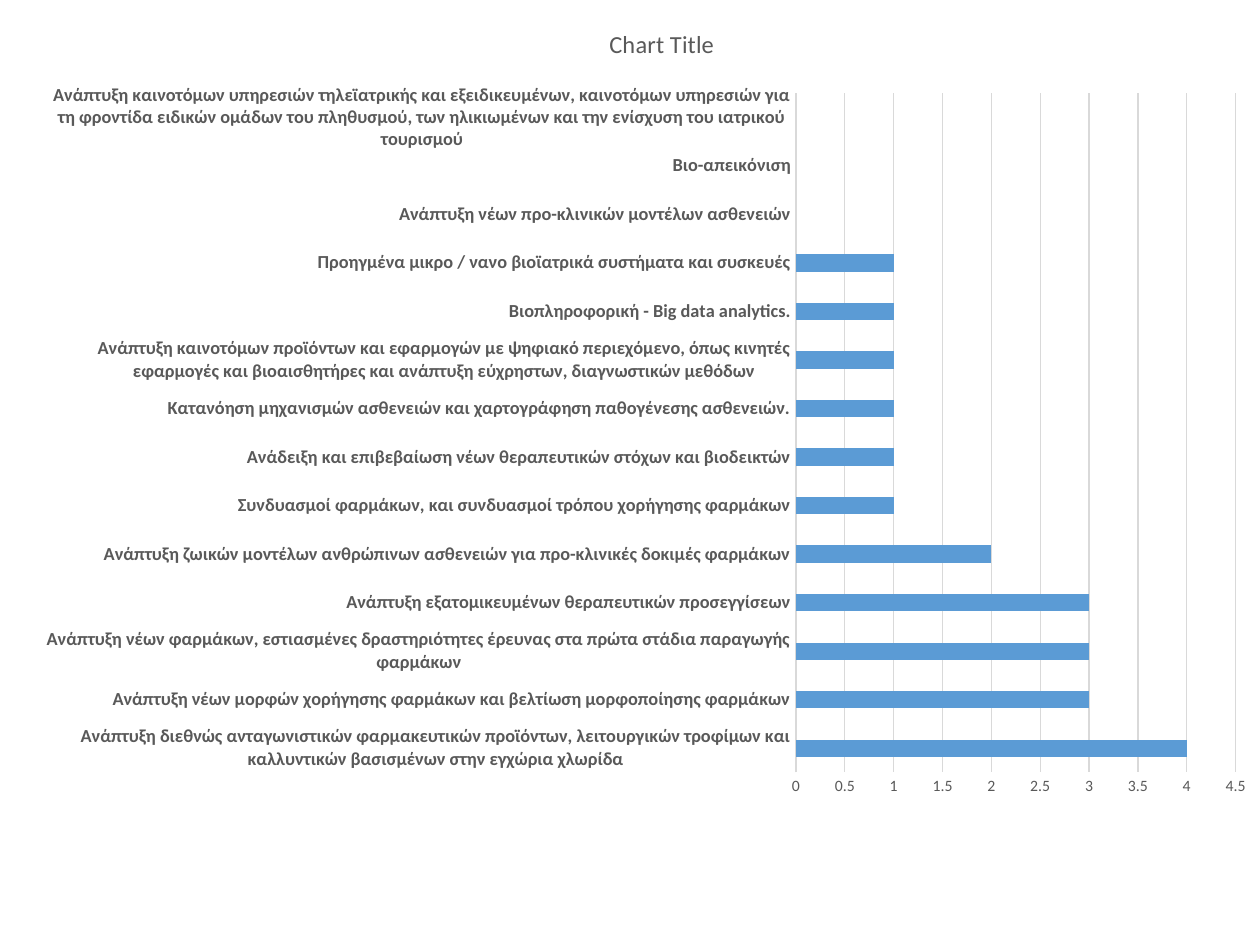
from dataclasses import dataclass
from lxml.etree import SubElement
from pptx import Presentation as Deck
from pptx.chart.data import CategoryChartData as Data
from pptx.dml.color import RGBColor as Rgb
from pptx.enum.chart import XL_CHART_TYPE as Kind, XL_TICK_MARK as Tick
from pptx.oxml.ns import qn
from pptx.util import Cm, Pt


@dataclass
class Theme:
    face: str = "Calibri"
    text: str = "595959"
    grid: str = "D9D9D9"
    bar: str = "5B9BD5"
    head: float = 14
    label: float = 10.5
    tick: float = 9
    line: float = 0.75


ROWS = [
    ("Ανάπτυξη διεθνώς ανταγωνιστικών φαρμακευτικών προϊόντων, λειτουργικών "
     "τροφίμων και καλλυντικών βασισμένων στην εγχώρια χλωρίδα", 4),
    ("Ανάπτυξη νέων μορφών χορήγησης φαρμάκων και βελτίωση μορφοποίησης φαρμάκων", 3),
    ("Ανάπτυξη νέων φαρμάκων, εστιασμένες δραστηριότητες έρευνας στα πρώτα "
     "στάδια παραγωγής φαρμάκων", 3),
    ("Ανάπτυξη εξατομικευμένων θεραπευτικών προσεγγίσεων", 3),
    ("Ανάπτυξη ζωικών μοντέλων ανθρώπινων ασθενειών για προ-κλινικές δοκιμές φαρμάκων", 2),
    ("Συνδυασμοί φαρμάκων, και συνδυασμοί τρόπου χορήγησης φαρμάκων", 1),
    ("Ανάδειξη και επιβεβαίωση νέων θεραπευτικών στόχων και βιοδεικτών", 1),
    ("Κατανόηση μηχανισμών ασθενειών και χαρτογράφηση παθογένεσης ασθενειών.", 1),
    ("Ανάπτυξη καινοτόμων προϊόντων και εφαρμογών με ψηφιακό περιεχόμενο, όπως κινητές "
     "εφαρμογές και βιοαισθητήρες και ανάπτυξη εύχρηστων, διαγνωστικών μεθόδων", 1),
    ("Βιοπληροφορική - Big data analytics.", 1),
    ("Προηγμένα μικρο / νανο βιοϊατρικά συστήματα και συσκευές", 1),
    ("Ανάπτυξη νέων προ-κλινικών μοντέλων ασθενειών", None),
    ("Βιο-απεικόνιση", None),
    ("Ανάπτυξη καινοτόμων υπηρεσιών τηλεϊατρικής και εξειδικευμένων, καινοτόμων υπηρεσιών "
     "για τη φροντίδα ειδικών ομάδων του πληθυσμού, των ηλικιωμένων και την ενίσχυση του "
     "ιατρικού τουρισμού", None),
]


class Page:
    """Draws styled elements on the current slide."""

    def __init__(self, deck, theme):
        self.theme = theme
        self.slide = deck.slides.add_slide(deck.slide_layouts[6])

    def font(self, font, size, bold=False):
        font.name, font.size, font.bold = self.theme.face, Pt(size), bold
        font.color.rgb = Rgb.from_string(self.theme.text)

    def line(self, form):
        form.line.color.rgb = Rgb.from_string(self.theme.grid)
        form.line.width = Pt(self.theme.line)

    def title(self, chart, text):
        chart.has_title = True
        chart.chart_title.include_in_layout = False
        run = chart.chart_title.text_frame.paragraphs[0].add_run()
        run.text = text
        self.font(run.font, self.theme.head)

    def axis(self, axis, size, bold=False):
        axis.major_tick_mark = axis.minor_tick_mark = Tick.NONE
        self.font(axis.tick_labels.font, size, bold)

    def frame(self, chart, **box):
        plot = chart.element.find(".//" + qn("c:plotArea"))
        for old in plot.findall(qn("c:layout")):
            plot.remove(old)
        outer = SubElement(plot, qn("c:layout"))
        plot.insert(0, outer)
        inner = SubElement(outer, qn("c:manualLayout"))
        marks = {"layoutTarget": "inner", "xMode": "edge", "yMode": "edge", **box}
        for tag, val in marks.items():
            SubElement(inner, qn("c:" + tag)).set("val", str(val))

    def bars(self, rows, left, top, width, height):
        data = Data()
        data.categories = [name for name, _ in rows]
        data.add_series("Series 1", [val for _, val in rows])
        chart = self.slide.shapes.add_chart(
            Kind.BAR_CLUSTERED, Cm(left), Cm(top), Cm(width), Cm(height), data).chart
        chart.has_legend = False
        self.font(chart.font, self.theme.tick)
        plot = chart.plots[0]
        plot.gap_width, plot.vary_by_categories = 182, False
        fill = plot.series[0].format.fill
        fill.solid()
        fill.fore_color.rgb = Rgb.from_string(self.theme.bar)
        names, scale = chart.category_axis, chart.value_axis
        self.axis(names, self.theme.label, True)
        self.line(names.format)
        self.axis(scale, self.theme.tick)
        scale.format.line.fill.background()
        scale.has_major_gridlines = True
        self.line(scale.major_gridlines.format)
        scale.minimum_scale, scale.maximum_scale, scale.major_unit = 0, 4.5, 0.5
        return chart


def main():
    deck = Deck()
    deck.slide_width, deck.slide_height = Cm(25.4), Cm(19.05)
    page = Page(deck, Theme())
    chart = page.bars(ROWS, 0.94, 0, 24.71, 16.36)
    page.title(chart, "Chart Title")
    page.frame(chart, x=0.61, y=0.115, w=0.36, h=0.837)
    deck.save("out.pptx")


if __name__ == "__main__":
    main()
